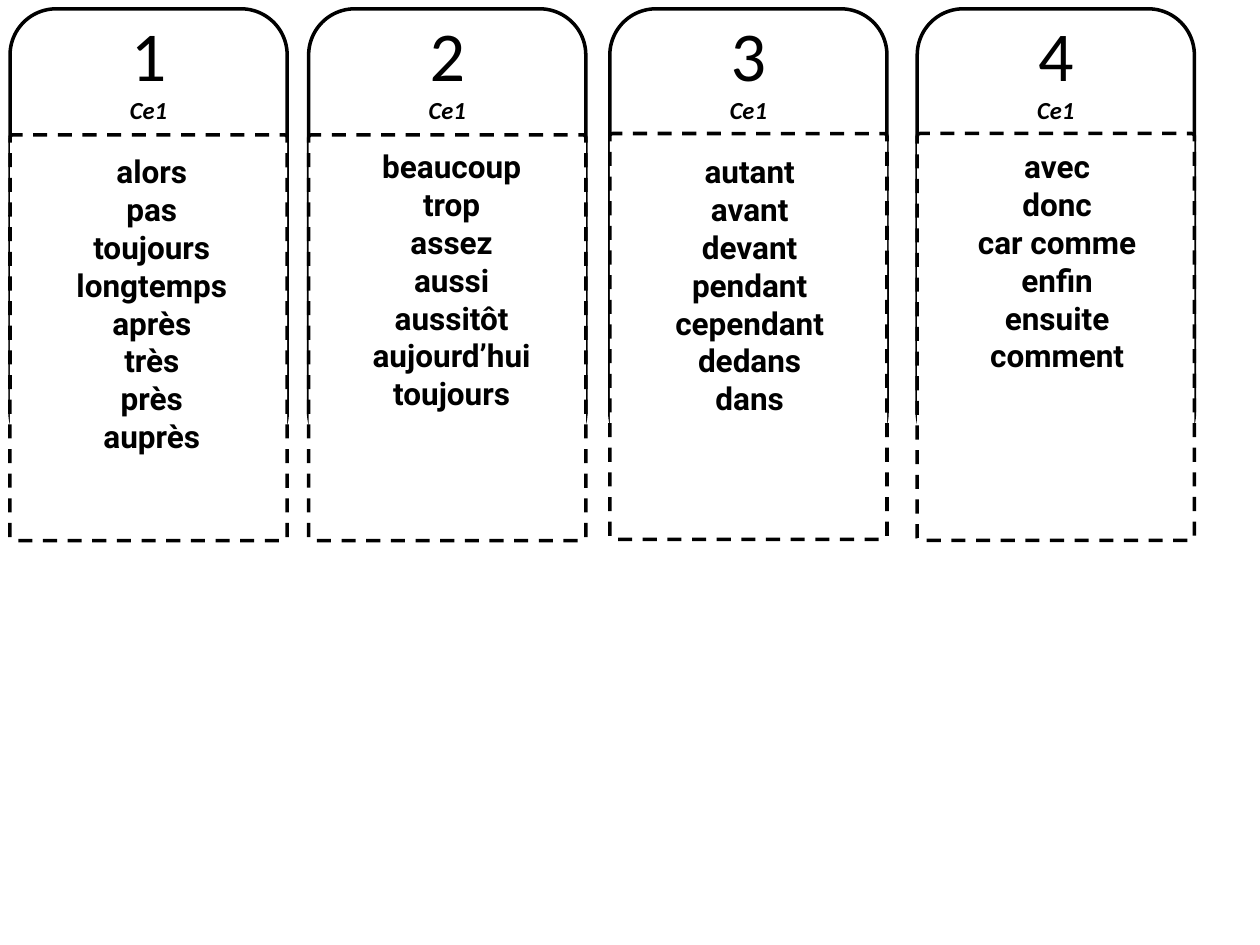
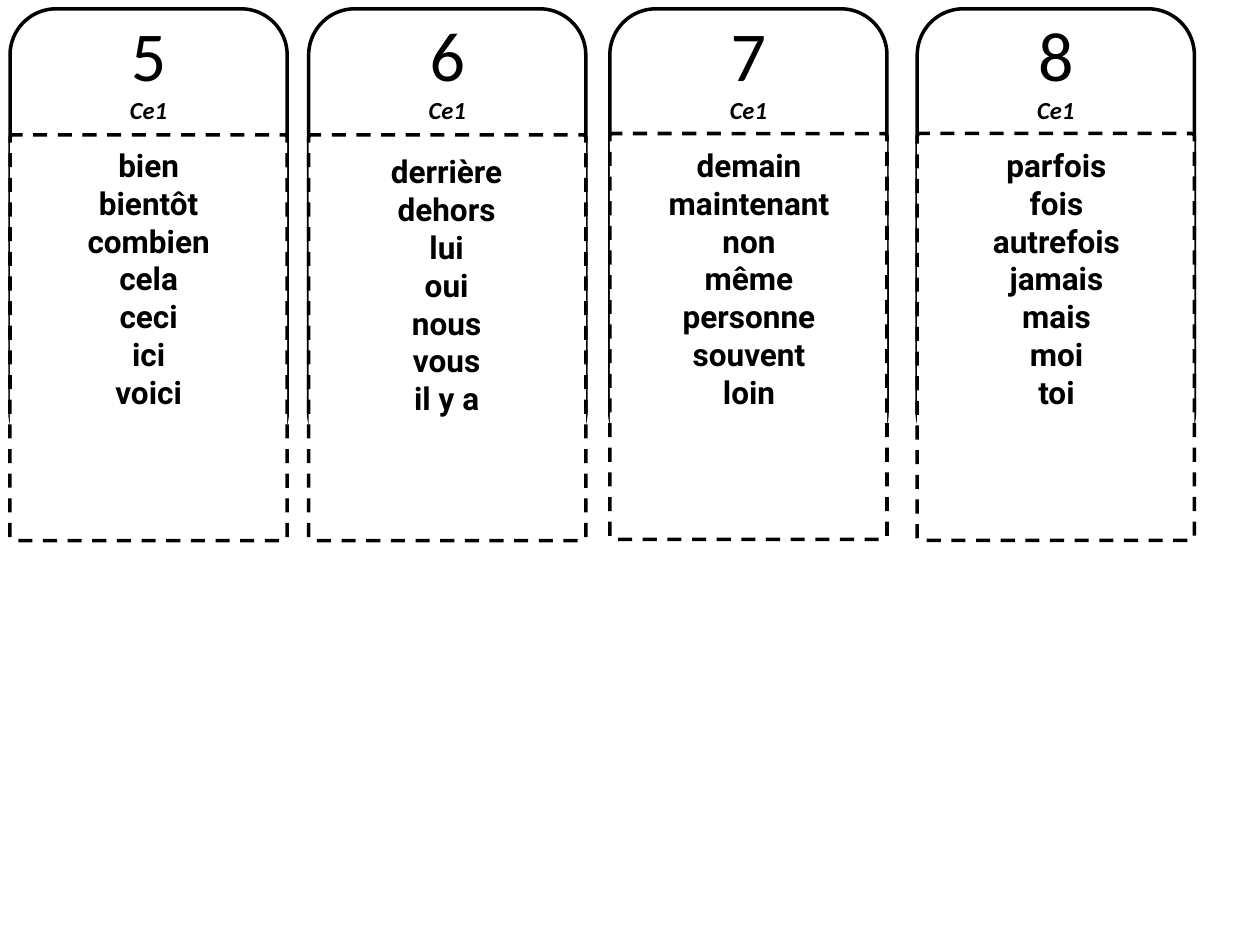
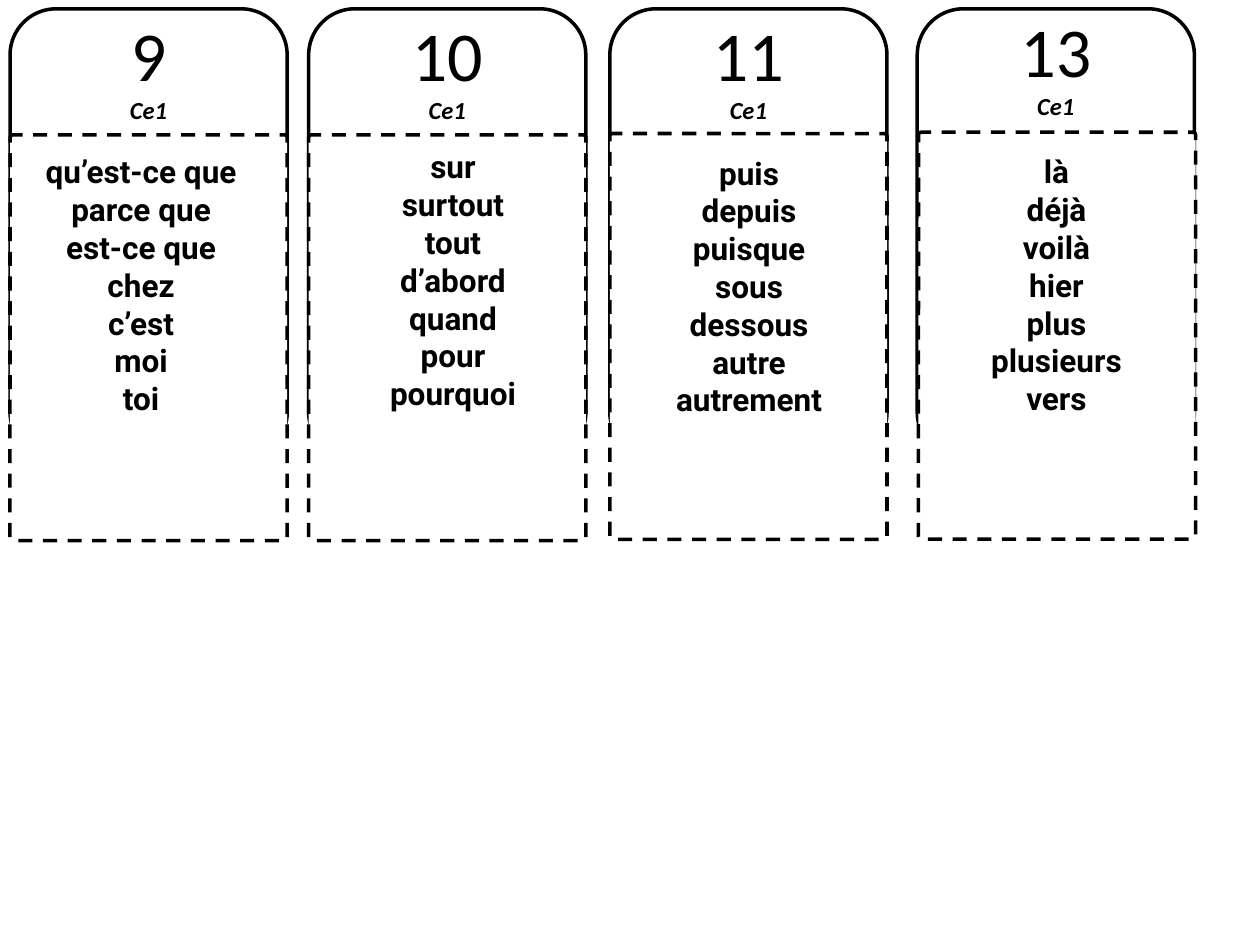
"""Build three sheets of numbered word cards for Ce1 spelling."""
import dataclasses
import typing

import pptx
import pptx.dml.color
import pptx.enum.dml
import pptx.enum.shapes
import pptx.enum.text
import pptx.util

Inches = pptx.util.Inches
Pt = pptx.util.Pt
Align = pptx.enum.text.PP_ALIGN
Anchor = pptx.enum.text.MSO_ANCHOR
Dash = pptx.enum.dml.MSO_LINE


@dataclasses.dataclass(frozen=True)
class Theme:
    ink: pptx.dml.color.RGBColor = pptx.dml.color.RGBColor(0, 0, 0)
    paper: pptx.dml.color.RGBColor = pptx.dml.color.RGBColor(255, 255, 255)
    head: str = "Calibri"
    body: str = "Roboto"
    number: float = 40
    level: float = 14
    word: float = 18
    line: float = 2


@dataclasses.dataclass(frozen=True)
class Slot:
    left: float
    top: float
    height: float = 3.22


@dataclasses.dataclass(frozen=True)
class Card:
    number: int
    words: str
    left: float
    top: float
    width: float
    height: float = 2.22
    shift: float = 0
    slot: typing.Optional[Slot] = None


THEME = Theme()
WIDTH = 2.2
HEAD_TOP = 0.07
HEAD_HEIGHT = 3.57
HEAD_GAP = 2.63
SLOTS = [Slot(0.08, 1.07), Slot(2.45, 1.07), Slot(4.84, 1.06), Slot(7.28, 1.06, 3.23)]

SHEETS = [
    [
        Card(1, "alors|pas|toujours|longtemps|après|très|près|auprès", 0.39, 1.16, 1.63, 2.52),
        Card(2, "beaucoup|trop|assez|aussi|aussitôt|aujourd’hui|toujours", 2.72, 1.12, 1.73),
        Card(3, "autant|avant|devant|pendant|cependant dedans|dans", 5.2, 1.16, 1.5),
        Card(4, "avec|donc|car comme|enfin|ensuite|comment", 7.65, 1.12, 1.48),
    ],
    [
        Card(5, "bien|bientôt|combien|cela|ceci|ici|voici", 0.4, 1.11, 1.56),
        Card(6, "derrière|dehors|lui|oui|nous|vous|il y a", 2.73, 1.16, 1.63),
        Card(7, "demain|maintenant|non|même|personne|souvent|loin", 5.01, 1.11, 1.87, 2.52),
        Card(8, "parfois|fois|autrefois|jamais|mais|moi|toi", 7.6, 1.11, 1.57),
    ],
    [
        Card(9, "qu’est-ce que|parce que|est-ce que|chez|c’est|moi|toi", 0.2, 1.16, 1.84, 2.52),
        Card(10, "sur|surtout|tout|d’abord|quand|pour|pourquoi", 2.62, 1.12, 1.95),
        Card(11, "puis|depuis|puisque|sous|dessous|autre|autrement", 5.05, 1.17, 1.79),
        Card(13, "là|déjà|voilà|hier|plus|plusieurs|vers", 7.35, 1.16, 2.07,
             shift=0.03, slot=Slot(7.29, 1.05, 3.23)),
    ],
]


def style(para, font: str, size: float, bold: bool = True, slant: bool = False) -> None:
    """Centre a paragraph and format its runs."""
    para.alignment = Align.CENTER
    for run in para.runs:
        run.font.name = font
        run.font.size = Pt(size)
        run.font.bold = bold
        run.font.italic = slant
        run.font.color.rgb = THEME.ink


def panel(slide, left: float, top: float, height: float):
    """Draw a rounded outline of card width."""
    shape = slide.shapes.add_shape(
        pptx.enum.shapes.MSO_SHAPE.ROUNDED_RECTANGLE,
        Inches(left), Inches(top), Inches(WIDTH), Inches(height))
    shape.shadow.inherit = False
    shape.fill.background()
    shape.line.color.rgb = THEME.ink
    shape.line.width = Pt(THEME.line)
    return shape


def header(slide, card: Card, left: float) -> None:
    """Draw the card top with its number and level."""
    frame = panel(slide, left, HEAD_TOP, HEAD_HEIGHT).text_frame
    frame.word_wrap = True
    frame.vertical_anchor = Anchor.MIDDLE
    frame.margin_top = 0
    frame.margin_bottom = Inches(HEAD_GAP + 2 * card.shift)
    frame.text = f"{card.number}\nCe1"
    number, level = frame.paragraphs
    style(number, THEME.head, THEME.number, bold=False)
    style(level, THEME.head, THEME.level, slant=True)


def pocket(slide, slot: Slot) -> None:
    """Draw the dashed panel behind the words."""
    shape = panel(slide, slot.left, slot.top, slot.height)
    shape.adjustments[0] = 0.01
    shape.fill.solid()
    shape.fill.fore_color.rgb = THEME.paper
    shape.line.dash_style = Dash.DASH


def words(slide, card: Card) -> None:
    """Write the word list, one word to a paragraph."""
    box = slide.shapes.add_textbox(
        Inches(card.left), Inches(card.top), Inches(card.width), Inches(card.height))
    frame = box.text_frame
    frame.word_wrap = True
    frame.auto_size = pptx.enum.text.MSO_AUTO_SIZE.SHAPE_TO_FIT_TEXT
    frame.text = card.words.replace("|", "\n")
    for para in frame.paragraphs:
        style(para, THEME.body, THEME.word)


def main() -> None:
    """Build every sheet and save the deck."""
    deck = pptx.Presentation()
    deck.slide_width = Inches(10)
    deck.slide_height = Inches(7.5)
    for cards in SHEETS:
        slide = deck.slides.add_slide(deck.slide_layouts[6])
        for card, slot in zip(cards, SLOTS):
            header(slide, card, slot.left)
            pocket(slide, card.slot or slot)
            words(slide, card)
    deck.save("out.pptx")


if __name__ == "__main__":
    main()
